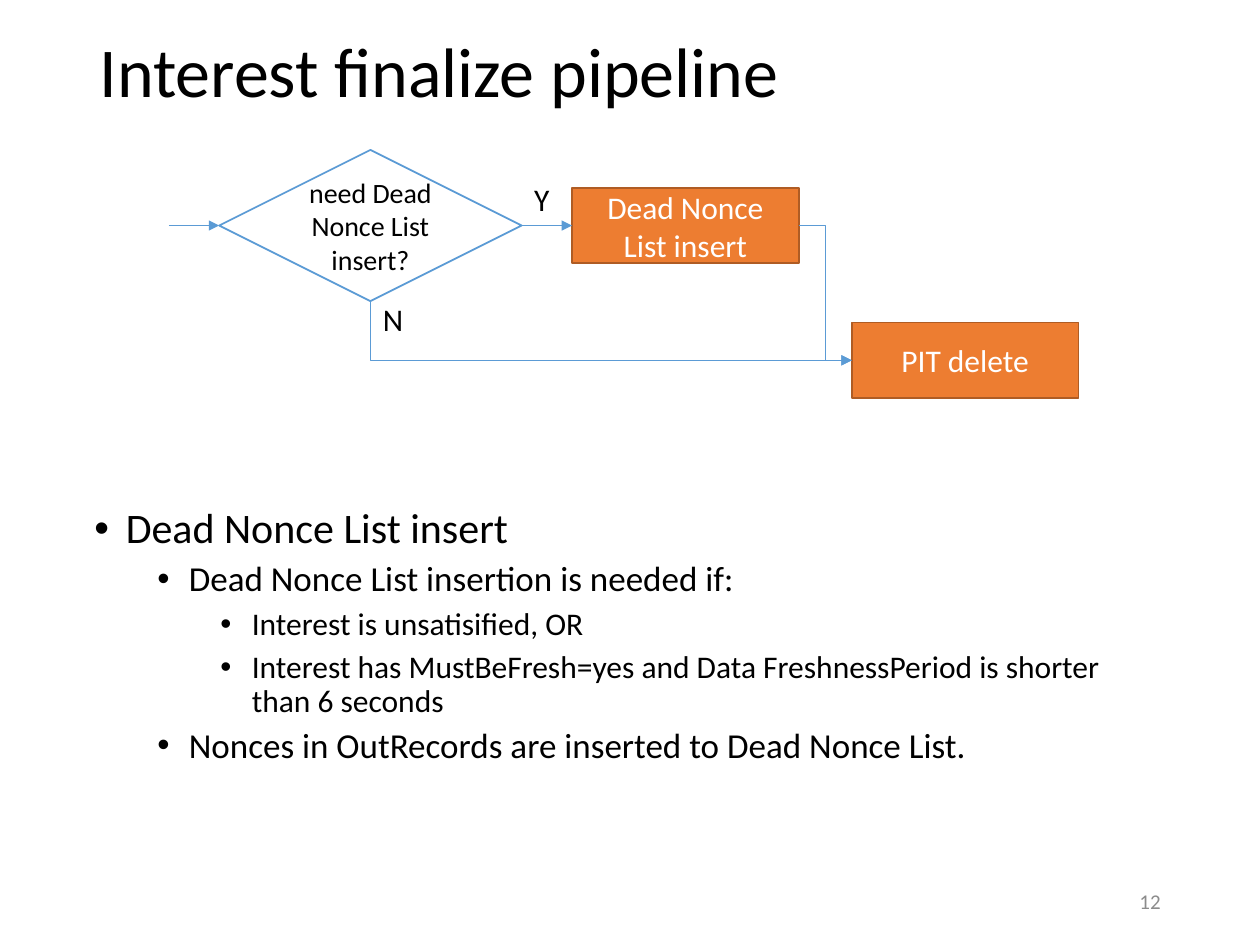
import pptx
import pptx.util
import pptx.dml.color
import pptx.enum.shapes
import pptx.enum.text
import pptx.oxml
import pptx.oxml.ns
from lxml import etree

Inches, Pt, qn = pptx.util.Inches, pptx.util.Pt, pptx.oxml.ns.qn
SHAPE = pptx.enum.shapes.MSO_SHAPE
LINK = pptx.enum.shapes.MSO_CONNECTOR
ALIGN = pptx.enum.text.PP_ALIGN
ANCHOR = pptx.enum.text.MSO_ANCHOR
TOP, LEFT, BOTTOM, RIGHT = range(4)

# Content
TITLE = "Interest finalize pipeline"
PAGE = "12"
NOTES = [
    (0, "Dead Nonce List insert"),
    (1, "Dead Nonce List insertion is needed if:"),
    (2, "Interest is unsatisified, OR"),
    (2, "Interest has MustBeFresh=yes and Data FreshnessPeriod is shorter than 6 seconds"),
    (1, "Nonces in OutRecords are inserted to Dead Nonce List."),
]

THEME = {
    "font": "Calibri",
    "ink": "000000", "paper": "FFFFFF", "muted": "8C8C8C",
    "action": "ED7D31", "action_edge": "AF5C24", "flow": "5B9BD5",
    "title": 40, "label": 18, "question": 16, "page": 12,
    "notes": (24, 20, 18), "edge": 1, "link": 0.5,
}

# Flow geometry: one centre line, equal gaps between steps
CENTRE, GAP = 1.79, 0.4
ACTION = (1.8, 0.6)
CHOICE = (2.4, 1.2)
CHOICE_X = 1.74
INSERT_X = CHOICE_X + CHOICE[0] + GAP
DELETE_X, DELETE_Y = 6.76, 2.86


def colour(name):
    return pptx.dml.color.RGBColor.from_string(THEME[name])


def write(paragraph, text, size, ink="ink", **layout):
    run = paragraph.add_run()
    run.text = text
    looks = {"name": THEME["font"], "size": Pt(size)}
    for target, values in ((run.font, looks), (paragraph, layout)):
        for key, value in values.items():
            setattr(target, key, value)
    run.font.color.rgb = colour(ink)


def text_box(box, **frame_format):
    frame = slide.shapes.add_textbox(*map(Inches, box)).text_frame
    for key, value in frame_format.items():
        setattr(frame, key, value)
    return frame


def step(kind, left, middle, size, text, text_size, fill, edge, ink):
    width, height = size
    shape = slide.shapes.add_shape(
        kind, *map(Inches, (left, middle - height / 2, width, height)))
    shape.shadow.inherit = False
    shape.fill.solid()
    shape.fill.fore_color.rgb = colour(fill)
    shape.line.color.rgb = colour(edge)
    shape.line.width = Pt(THEME["edge"])
    shape.text_frame.vertical_anchor = ANCHOR.MIDDLE
    write(shape.text_frame.paragraphs[0], text, text_size, ink, alignment=ALIGN.CENTER)
    return shape


def arrow(kind, start, end, begin=None, finish=None):
    link = slide.shapes.add_connector(kind, *map(Inches, start + end))
    if begin:
        link.begin_connect(*begin)
    if finish:
        link.end_connect(*finish)
    link.line.color.rgb = colour("flow")
    link.line.width = Pt(THEME["link"])
    etree.SubElement(link.line._get_or_add_ln(), qn("a:tailEnd"), type="triangle")
    etree.SubElement(link._element.spPr, qn("a:effectLst"))
    return link


def turn_once(link):
    """Make an elbow go down, then right, with a single corner."""
    left, top, width, height = link.left, link.top, link.width, link.height
    link.left = left + (width - height) // 2
    link.top = top + (height - width) // 2
    link.width, link.height = height, width
    properties = link._element.spPr
    properties.find(qn("a:prstGeom")).set("prst", "bentConnector2")
    frame = properties.find(qn("a:xfrm"))
    frame.set("rot", str(270 * 60000))
    frame.set("flipH", "1")


prs = pptx.Presentation()
prs.slide_width, prs.slide_height = Inches(10), Inches(7.5)
slide = prs.slides.add_slide(prs.slide_layouts[5])

# Title
heading = slide.shapes.title
for side, length in zip(("left", "top", "width", "height"), (0.69, 0.02, 8.62, 1.14)):
    setattr(heading, side, Inches(length))
heading.text_frame.vertical_anchor = ANCHOR.MIDDLE
write(heading.text_frame.paragraphs[0], TITLE, THEME["title"],
      alignment=ALIGN.LEFT, line_spacing=0.9)

# Page number
page = text_box((7.06, 6.95, 2.25, 0.4), word_wrap=True, vertical_anchor=ANCHOR.MIDDLE)
write(page.paragraphs[0], PAGE, THEME["page"], "muted", alignment=ALIGN.RIGHT)

# Steps
action_look = (THEME["label"], "action", "action_edge", "paper")
pit_delete = step(SHAPE.RECTANGLE, DELETE_X, DELETE_Y, ACTION, "PIT delete", *action_look)
nonce_insert = step(SHAPE.RECTANGLE, INSERT_X, CENTRE, ACTION,
                    "Dead Nonce List insert", *action_look)
need_insert = step(SHAPE.FLOWCHART_DECISION, CHOICE_X, CENTRE, CHOICE,
                   "need Dead Nonce List insert?", THEME["question"],
                   "paper", "flow", "ink")

# Arrows
choice_left = (CHOICE_X, CENTRE)
choice_right = (CHOICE_X + CHOICE[0], CENTRE)
choice_bottom = (CHOICE_X + CHOICE[0] / 2, CENTRE + CHOICE[1] / 2)
insert_left = (INSERT_X, CENTRE)
insert_right = (INSERT_X + ACTION[0], CENTRE)
delete_left = (DELETE_X, DELETE_Y)
arrow(LINK.STRAIGHT, (CHOICE_X - GAP, CENTRE), choice_left, finish=(need_insert, LEFT))
arrow(LINK.STRAIGHT, choice_right, insert_left, (need_insert, RIGHT), (nonce_insert, LEFT))
arrow(LINK.ELBOW, insert_right, delete_left, (nonce_insert, RIGHT), (pit_delete, LEFT))
turn_once(arrow(LINK.ELBOW, choice_bottom, delete_left,
                (need_insert, BOTTOM), (pit_delete, LEFT)))

# Branch labels
for answer, box in (("Y", (choice_right[0], 1.38, 0.32, 0.4)),
                    ("N", (choice_bottom[0], 2.33, 0.36, 0.4))):
    label = text_box(box, word_wrap=False,
                     auto_size=pptx.enum.text.MSO_AUTO_SIZE.SHAPE_TO_FIT_TEXT)
    write(label.paragraphs[0], answer, THEME["label"])

# Notes
notes = text_box((0.65, 3.98, 8.62, 3.03), word_wrap=True)
for index, (level, note) in enumerate(NOTES):
    paragraph = notes.add_paragraph() if index else notes.paragraphs[0]
    write(paragraph, note, THEME["notes"][level], level=level,
          line_spacing=0.9, space_before=Pt(5 if level else 10))
    properties = paragraph._p.get_or_add_pPr()
    properties.set("marL", str(Inches(0.25 + 0.5 * level)))
    properties.set("indent", str(Inches(-0.25)))
    etree.SubElement(properties, qn("a:buFont"), typeface="Arial")
    etree.SubElement(properties, qn("a:buChar"), char="•")

prs.save("out.pptx")
